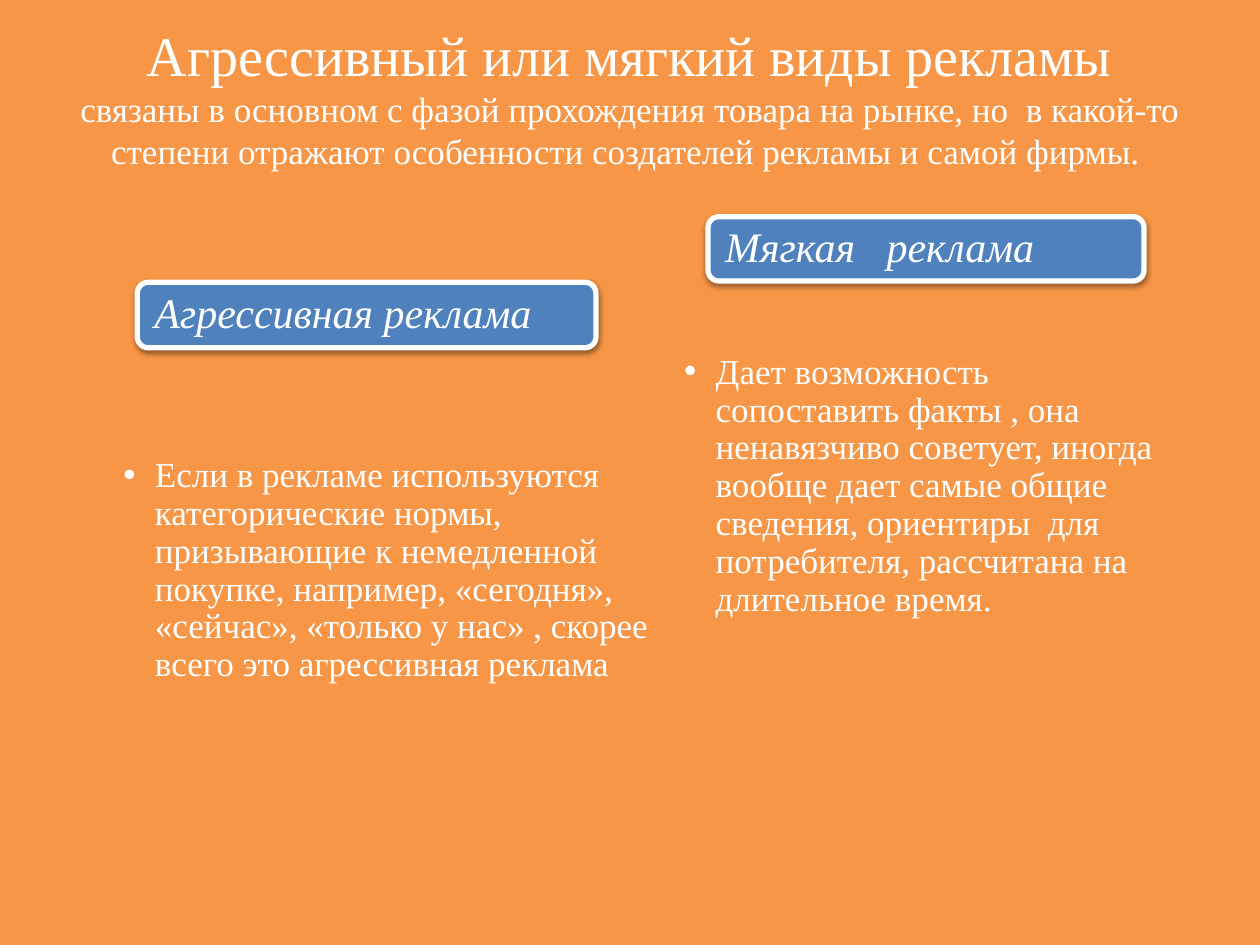
from dataclasses import dataclass

from lxml import etree
from pptx import Presentation
from pptx import util as u
from pptx.dml.color import RGBColor
from pptx.enum import shapes, text
from pptx.oxml.ns import qn

FONT = "Times New Roman"
WHITE, BLUE, ORANGE = "FFFFFF", "4F81BD", "F79646"


@dataclass
class Box:
    left: float
    top: float
    width: float
    height: float

    def lengths(self) -> list:
        return [u.Inches(v) for v in (self.left, self.top, self.width, self.height)]


@dataclass
class AdKind:
    heading: str
    heading_box: Box
    description: str
    description_box: Box


AD_KINDS = [
    AdKind(
        "Агрессивная реклама", Box(1.09, 2.24, 3.64, 0.52),
        "Если в рекламе используются категорические нормы, призывающие к "
        "немедленной покупке, например, «сегодня», «сейчас», «только у нас» , "
        "скорее всего это агрессивная реклама", Box(0.78, 3.6, 4.53, 2.01)),
    AdKind(
        "Мягкая   реклама", Box(5.62, 1.72, 3.46, 0.51),
        "Дает возможность сопоставить факты , она ненавязчиво советует, иногда "
        "вообще дает самые общие сведения, ориентиры  для потребителя, "
        "рассчитана на длительное время.", Box(5.23, 2.78, 4.17, 1.3)),
]


def rgb(color: str) -> RGBColor:
    return RGBColor.from_string(color)


def place(sp, box: Box) -> None:
    sp.left, sp.top, sp.width, sp.height = box.lengths()


def format_run(r, size: float, italic: bool = False) -> None:
    r.font.name = FONT
    r.font.size = u.Pt(size)
    r.font.italic = italic
    r.font.color.rgb = rgb(WHITE)


def set_insets(tf, left: float, right: float, vertical: float) -> None:
    tf.margin_left, tf.margin_right = u.Inches(left), u.Inches(right)
    tf.margin_top = tf.margin_bottom = u.Inches(vertical)


def add_soft_shadow(sp) -> None:
    sp.shadow.inherit = False
    effects = sp.element.spPr.find(qn("a:effectLst"))
    shadow = etree.SubElement(effects, qn("a:outerShdw"), blurRad=str(u.Pt(3.1)),
                              dist=str(u.Pt(1.6)), dir="5400000", rotWithShape="0")
    color = etree.SubElement(shadow, qn("a:srgbClr"), val="000000")
    etree.SubElement(color, qn("a:alpha"), val="38000")


def set_bullet(p, indent: float) -> None:
    pPr = p._p.get_or_add_pPr()
    pPr.set("marL", str(u.Inches(indent)))
    pPr.set("indent", str(-u.Inches(indent)))
    etree.SubElement(pPr, qn("a:buChar"), char="•")


def fill_title(sp) -> None:
    place(sp, Box(0.5, 0.3, 9, 0.93))
    tf = sp.text_frame
    tf.auto_size = text.MSO_AUTO_SIZE.NONE
    tf.vertical_anchor = text.MSO_ANCHOR.MIDDLE
    p = tf.paragraphs[0]
    p.text = ("Агрессивный или мягкий виды рекламы\v"
              "связаны в основном с фазой прохождения товара на рынке, но  в "
              "какой-то степени отражают особенности создателей рекламы и самой фирмы. ")
    p.alignment = text.PP_ALIGN.CENTER
    for r, size in zip(p.runs, (32, 20)):
        format_run(r, size)


def add_heading(slide, kind: AdKind) -> None:
    sp = slide.shapes.add_shape(shapes.MSO_SHAPE.ROUNDED_RECTANGLE,
                                *kind.heading_box.lengths())
    sp.fill.solid()
    sp.fill.fore_color.rgb = rgb(BLUE)
    sp.line.color.rgb = rgb(WHITE)
    sp.line.width = u.Pt(3)
    add_soft_shadow(sp)
    tf = sp.text_frame
    tf.word_wrap = True
    tf.vertical_anchor = text.MSO_ANCHOR.MIDDLE
    set_insets(tf, 0.11, 0.11, 0.05)
    p = tf.paragraphs[0]
    p.text = kind.heading
    p.alignment = text.PP_ALIGN.LEFT
    p.line_spacing = 0.9
    format_run(p.runs[0], 24, italic=True)


def fill_description(sp, kind: AdKind) -> None:
    place(sp, kind.description_box)
    tf = sp.text_frame
    tf.auto_size = text.MSO_AUTO_SIZE.NONE
    set_insets(tf, 0.2, 0.16, 0.03)
    p = tf.paragraphs[0]
    p.text = kind.description
    p.line_spacing = 0.9
    p.space_before = u.Pt(0)
    p.space_after = u.Pt(4)
    set_bullet(p, 0.25)
    format_run(p.runs[0], 20)


def main() -> None:
    prs = Presentation()
    prs.slide_width, prs.slide_height = u.Inches(10), u.Inches(7.5)
    slide = prs.slides.add_slide(prs.slide_layouts.get_by_name("Two Content"))
    slide.background.fill.solid()
    slide.background.fill.fore_color.rgb = rgb(ORANGE)

    title, *bodies = list(slide.placeholders)
    fill_title(title)
    for kind, body in zip(AD_KINDS, bodies):
        add_heading(slide, kind)
        fill_description(body, kind)
    prs.save("out.pptx")


if __name__ == "__main__":
    main()
